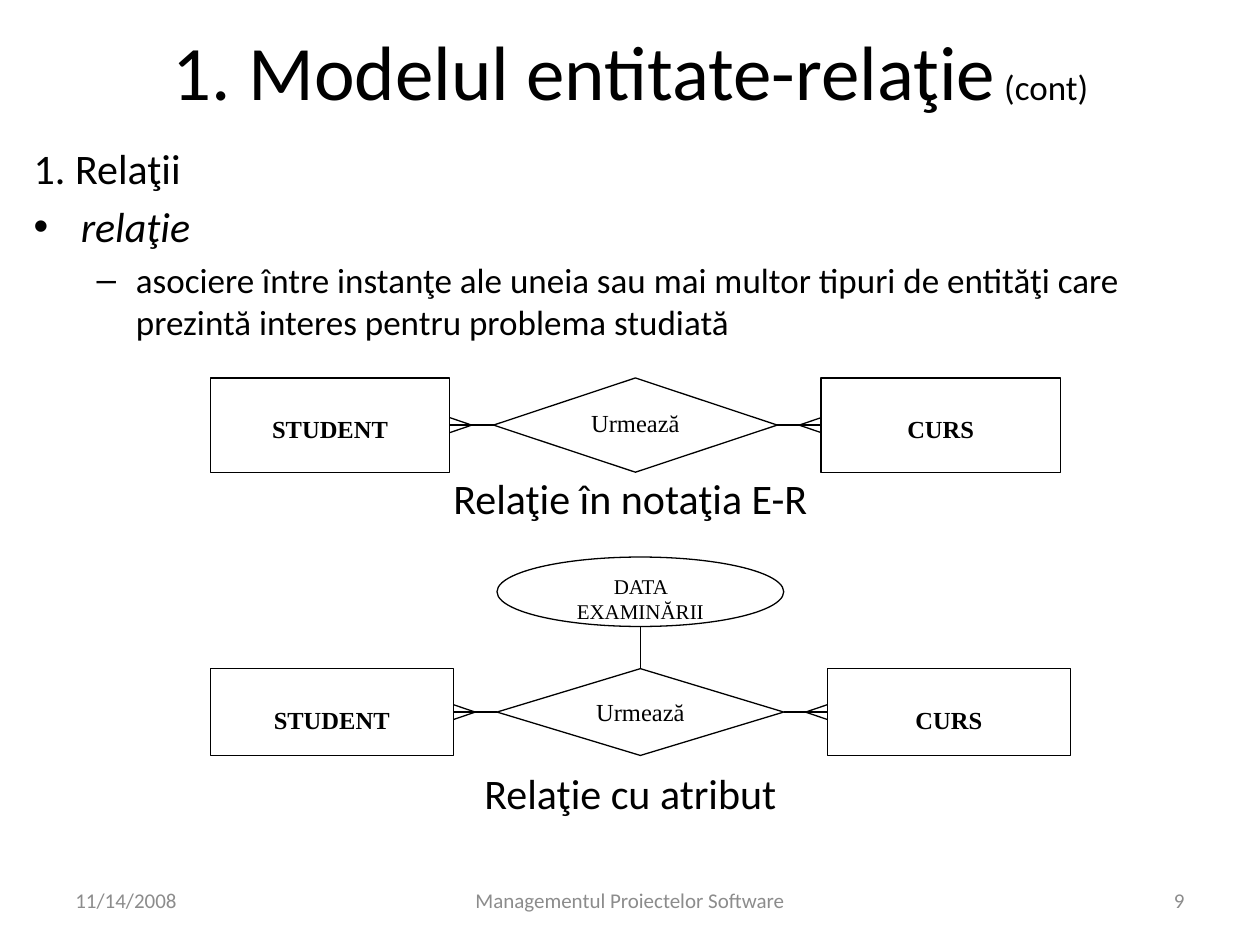
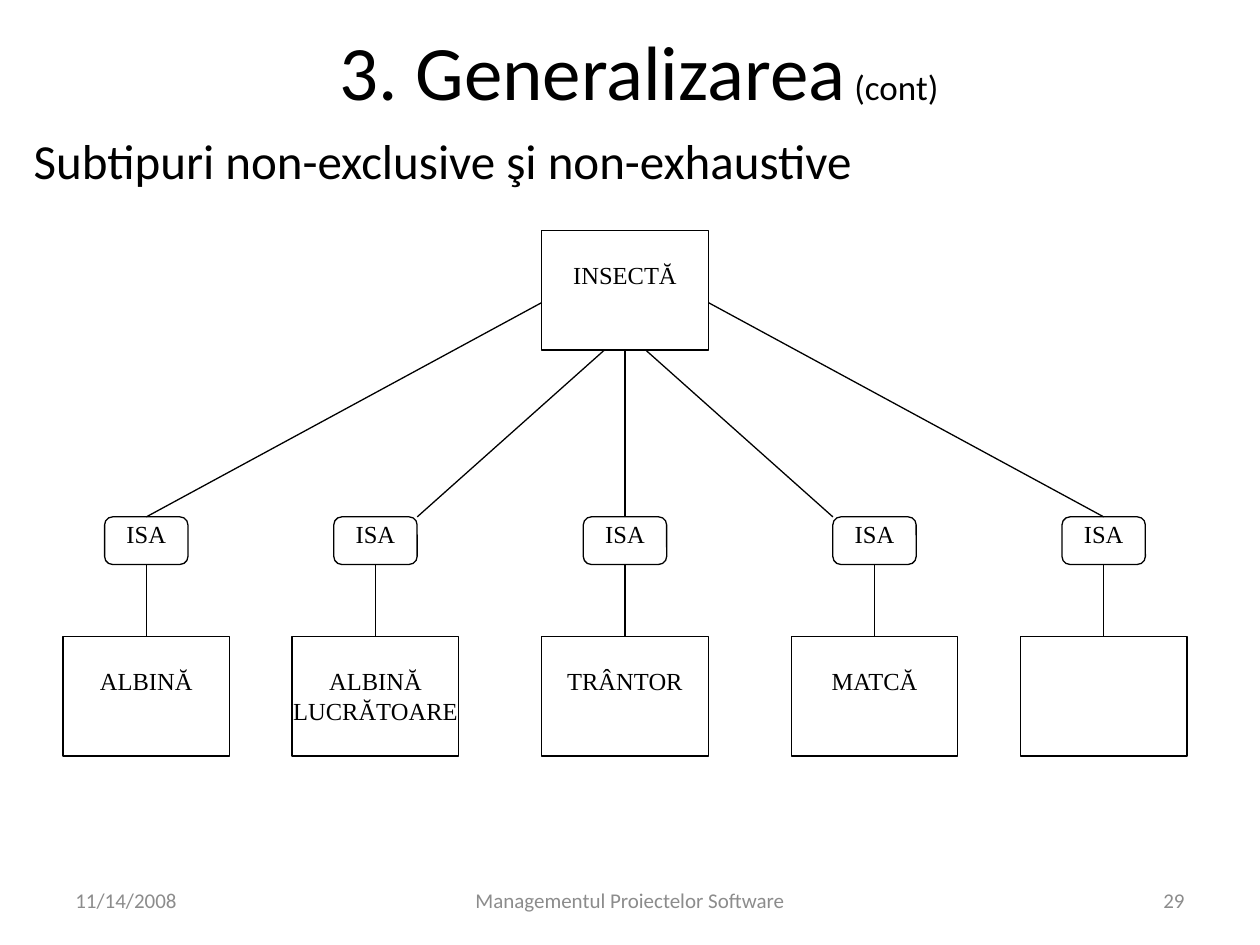
"""Build two lecture slides on entity-relationship modelling."""
from dataclasses import dataclass

from lxml.etree import SubElement
from pptx import Presentation
from pptx.dml.color import RGBColor
from pptx.enum.shapes import MSO_CONNECTOR as Link, MSO_SHAPE as Kind
from pptx.enum.text import MSO_ANCHOR as Anchor, MSO_AUTO_SIZE as AutoSize, PP_ALIGN as Align
from pptx.oxml.ns import qn
from pptx.shapes.autoshape import Shape
from pptx.shapes.connector import Connector
from pptx.slide import Slide
from pptx.text.text import _Paragraph as Paragraph
from pptx.util import Cm, Pt

COLORS = {"ink": "000000", "paper": "FFFFFF", "footer": "8C8C8C"}
SANS, SERIF = "Calibri", "Times New Roman"
MARGIN, CONTENT_WIDTH = 0.43, 24.56
PADDING = 0.13
TOP, LEFT, BOTTOM, RIGHT = range(4)


@dataclass(frozen=True)
class Bullet:
    mark: str
    margin: float
    hanging: float


@dataclass(frozen=True)
class Line:
    text: str
    size: float = 24
    italic: bool = False
    bullet: Bullet | None = None
    level: int = 0
    spacing: float = 1.0


@dataclass(frozen=True)
class FooterPart:
    left: float
    width: float
    align: Align


@dataclass(frozen=True)
class Relation:
    top: float
    height: float
    entity_width: float
    diamond_width: float
    caption: str
    caption_top: float
    attribute: str = ""


@dataclass(frozen=True)
class Subtype:
    label: str
    offset: float
    start: tuple[float, float] | None = None
    corner: int = 0


DOT = Bullet("•", 0.95, 0.95)
DASH = Bullet("–", 2.06, 0.79)
FOOTER = (FooterPart(1.27, 5.93, Align.LEFT), FooterPart(8.68, 8.04, Align.CENTER),
          FooterPart(18.2, 5.93, Align.RIGHT))

RELATION_LINES = (
    Line("1. Relaţii"),
    Line("relaţie", italic=True, bullet=DOT),
    Line("asociere între instanţe ale uneia sau mai multor tipuri de entităţi care "
         "prezintă interes pentru problema studiată", 20, bullet=DASH, level=1),
)
RELATIONS = (
    Relation(7.62, 1.9, 4.83, 5.72, "Relaţie în notaţia E-R", 9.4),
    Relation(13.48, 1.75, 4.9, 5.78, "Relaţie cu atribut", 15.35, "DATA EXAMINĂRII"),
)
RELATION_LEFT, RELATION_GAP, FOOT_SPREAD = 4.24, 0.88, 0.15
ATTRIBUTE_TOP, ATTRIBUTE_HEIGHT = 11.23, 1.4

TREE_CENTER, ROOT_TOP, ISA_TOP, SUBTYPE_TOP = 12.6, 4.65, 10.42, 12.83
NODE_WIDTH, NODE_HEIGHT = 3.36, 2.41
ISA_WIDTH, ISA_HEIGHT = 1.68, 0.96
SIDE_START = (NODE_WIDTH / 2, 1.45)
BASE_START = (0.42, NODE_HEIGHT)
SUBTYPES = (
    Subtype("ALBINĂ", -9.65, SIDE_START),
    Subtype("ALBINĂ LUCRĂTOARE", -5.03, BASE_START, 1),
    Subtype("TRÂNTOR", 0),
    Subtype("MATCĂ", 5.03, BASE_START, 1),
    Subtype("", 9.65, SIDE_START),
)


def rgb(name: str) -> RGBColor:
    """Return the named colour."""
    return RGBColor.from_string(COLORS[name])


def add_span(para: Paragraph, text: str, color: str = "ink", **formats) -> None:
    """Add a run with the given font values."""
    span = para.add_run()
    span.text = text
    span.font.color.rgb = rgb(color)
    for name, value in formats.items():
        setattr(span.font, name, value)


def set_frame(box: Shape, anchor: Anchor, insets: tuple[float, float] | None = None) -> None:
    """Set wrapping, anchor and the side and top insets of a text frame."""
    formats = {"word_wrap": True, "auto_size": AutoSize.NONE, "vertical_anchor": anchor}
    if insets:
        side, top = insets
        formats |= {"margin_left": Cm(side), "margin_right": Cm(side),
                    "margin_top": Cm(top), "margin_bottom": Cm(0)}
    for name, value in formats.items():
        setattr(box.text_frame, name, value)


def add_box(page: Slide, left: float, top: float, width: float, height: float,
            anchor: Anchor = Anchor.TOP) -> Shape:
    """Add an empty wrapped text box."""
    box = page.shapes.add_textbox(Cm(left), Cm(top), Cm(width), Cm(height))
    set_frame(box, anchor)
    return box


def add_label(page: Slide, text: str, left: float, top: float, width: float, height: float,
              size: float, align: Align, color: str = "ink",
              anchor: Anchor = Anchor.TOP) -> None:
    """Add a text box with one line."""
    para = add_box(page, left, top, width, height, anchor).text_frame.paragraphs[0]
    para.alignment = align
    add_span(para, text, color, size=Pt(size), name=SANS)


def set_bullet(para: Paragraph, bullet: Bullet) -> None:
    """Give a paragraph a bullet and a hanging indent."""
    properties = para._p.get_or_add_pPr()
    properties.set("marL", str(Cm(bullet.margin)))
    properties.set("indent", str(-Cm(bullet.hanging)))
    SubElement(properties, qn("a:buFont")).set("typeface", "Arial")
    SubElement(properties, qn("a:buChar")).set("char", bullet.mark)


def add_body(page: Slide, lines: tuple[Line, ...], height: float) -> None:
    """Add the text block under the title."""
    frame = add_box(page, MARGIN, 2.74, CONTENT_WIDTH, height).text_frame
    for index, line in enumerate(lines):
        para = frame.add_paragraph() if index else frame.paragraphs[0]
        formats = {"level": line.level, "line_spacing": line.spacing,
                   "space_before": Pt(line.size * 0.2)}
        for name, value in formats.items():
            setattr(para, name, value)
        if line.bullet:
            set_bullet(para, line.bullet)
        add_span(para, line.text, size=Pt(line.size), name=SANS, italic=line.italic)


def add_page(deck: Presentation, title: str, number: int) -> Slide:
    """Add a slide with its title and footer."""
    page = deck.slides.add_slide(deck.slide_layouts[5])
    heading = page.shapes.title
    place = {"left": MARGIN, "top": MARGIN, "width": CONTENT_WIDTH, "height": 2.54}
    for name, value in place.items():
        setattr(heading, name, Cm(value))
    set_frame(heading, Anchor.MIDDLE)
    para = heading.text_frame.paragraphs[0]
    para.alignment, para.line_spacing = Align.CENTER, 0.6
    add_span(para, title, size=Pt(44), name=SANS)
    add_span(para, " (cont)", size=Pt(20), name=SANS)
    texts = ("11/14/2008", "Managementul Proiectelor Software", str(number))
    for part, text in zip(FOOTER, texts):
        add_label(page, text, part.left, 17.65, part.width, 1.01, 12, part.align,
                  "footer", Anchor.MIDDLE)
    return page


def add_node(page: Slide, kind: Kind, text: str, left: float, top: float, width: float,
             height: float, insets: tuple[float, float], size: float = 14,
             bold: bool = False) -> Shape:
    """Add an outlined diagram shape with centred text."""
    node = page.shapes.add_shape(kind, Cm(left), Cm(top), Cm(width), Cm(height))
    node.shadow.inherit = False
    node.fill.solid()
    node.fill.fore_color.rgb = rgb("paper")
    node.line.color.rgb = rgb("ink")
    node.line.width = Pt(0.75)
    set_frame(node, Anchor.TOP, insets)
    if text:
        para = node.text_frame.paragraphs[0]
        para.alignment = Align.CENTER
        add_span(para, text, size=Pt(size), name=SERIF, bold=bold)
    return node


def add_line(page: Slide, start: tuple[float, float] = (0, 0),
             end: tuple[float, float] = (0, 0)) -> Connector:
    """Add a thin straight line."""
    line = page.shapes.add_connector(Link.STRAIGHT, *(Cm(value) for value in (*start, *end)))
    line.line.color.rgb = rgb("ink")
    line.line.width = Pt(0.75)
    SubElement(line._element.spPr, qn("a:effectLst"))
    return line


def join(page: Slide, first: Shape, first_side: int, second: Shape, second_side: int) -> None:
    """Link the side middles of two shapes."""
    line = add_line(page)
    line.begin_connect(first, first_side)
    line.end_connect(second, second_side)


def add_crow_foot(page: Slide, edge: float, apex: float, middle: float) -> None:
    """Draw the two outer toes of a many-end."""
    for spread in (-FOOT_SPREAD, FOOT_SPREAD):
        add_line(page, (apex, middle), (edge, middle + spread))


def add_relation(page: Slide, relation: Relation) -> None:
    """Draw two entities joined by a relationship diamond."""
    top, height = relation.top, relation.height
    student_edge = RELATION_LEFT + relation.entity_width
    diamond_left = student_edge + RELATION_GAP
    course_left = diamond_left + relation.diamond_width + RELATION_GAP
    student, course = (
        add_node(page, Kind.RECTANGLE, name, left, top, relation.entity_width, height,
                 (0.25, 0.73), bold=True)
        for name, left in (("STUDENT", RELATION_LEFT), ("CURS", course_left)))
    diamond = add_node(page, Kind.DIAMOND, "Urmează", diamond_left, top,
                       relation.diamond_width, height, (0.25, PADDING))
    join(page, diamond, LEFT, student, RIGHT)
    join(page, course, LEFT, diamond, RIGHT)
    for edge, reach in ((student_edge, RELATION_GAP / 2), (course_left, -RELATION_GAP / 2)):
        add_crow_foot(page, edge, edge + reach, top + height / 2)
    if relation.attribute:
        add_node(page, Kind.OVAL, relation.attribute, diamond_left, ATTRIBUTE_TOP,
                 relation.diamond_width, ATTRIBUTE_HEIGHT, (0.25, PADDING), 12)
        center = diamond_left + relation.diamond_width / 2
        stem = add_line(page, (center, ATTRIBUTE_TOP + ATTRIBUTE_HEIGHT), (center, top))
        stem.end_connect(diamond, TOP)
    add_label(page, relation.caption, MARGIN, relation.caption_top, CONTENT_WIDTH, 1.3, 24,
              Align.CENTER)


def add_tree_node(page: Slide, text: str, center: float, top: float) -> Shape:
    """Draw a type box of the hierarchy."""
    return add_node(page, Kind.RECTANGLE, text, center - NODE_WIDTH / 2, top,
                    NODE_WIDTH, NODE_HEIGHT, (0, 0.6))


def add_subtype(page: Slide, root: Shape, subtype: Subtype) -> None:
    """Draw a subtype, its ISA marker and the lines to the root."""
    center = TREE_CENTER + subtype.offset
    marker = add_node(page, Kind.ROUNDED_RECTANGLE, "ISA", center - ISA_WIDTH / 2, ISA_TOP,
                      ISA_WIDTH, ISA_HEIGHT, (0, 0))
    join(page, marker, BOTTOM, add_tree_node(page, subtype.label, center, SUBTYPE_TOP), TOP)
    if subtype.start is None:
        join(page, root, BOTTOM, marker, TOP)
        return
    side = 1 if subtype.offset > 0 else -1
    reach, drop = subtype.start
    line = add_line(page, (TREE_CENTER + side * reach, ROOT_TOP + drop),
                    (center - side * subtype.corner * ISA_WIDTH / 2, ISA_TOP))
    if not subtype.corner:
        line.end_connect(marker, TOP)


def main() -> None:
    """Build and save the deck."""
    deck = Presentation()
    deck.slide_width, deck.slide_height = Cm(25.4), Cm(19.05)

    page = add_page(deck, "1. Modelul entitate-relaţie", 9)
    add_body(page, RELATION_LINES, 4.8)
    for relation in RELATIONS:
        add_relation(page, relation)

    page = add_page(deck, " 3. Generalizarea", 29)
    add_body(page, (Line("Subtipuri non-exclusive şi non-exhaustive", 28, spacing=0.8),), 1.6)
    root = add_tree_node(page, "INSECTĂ", TREE_CENTER, ROOT_TOP)
    for subtype in SUBTYPES:
        add_subtype(page, root, subtype)

    deck.save("out.pptx")


if __name__ == "__main__":
    main()
